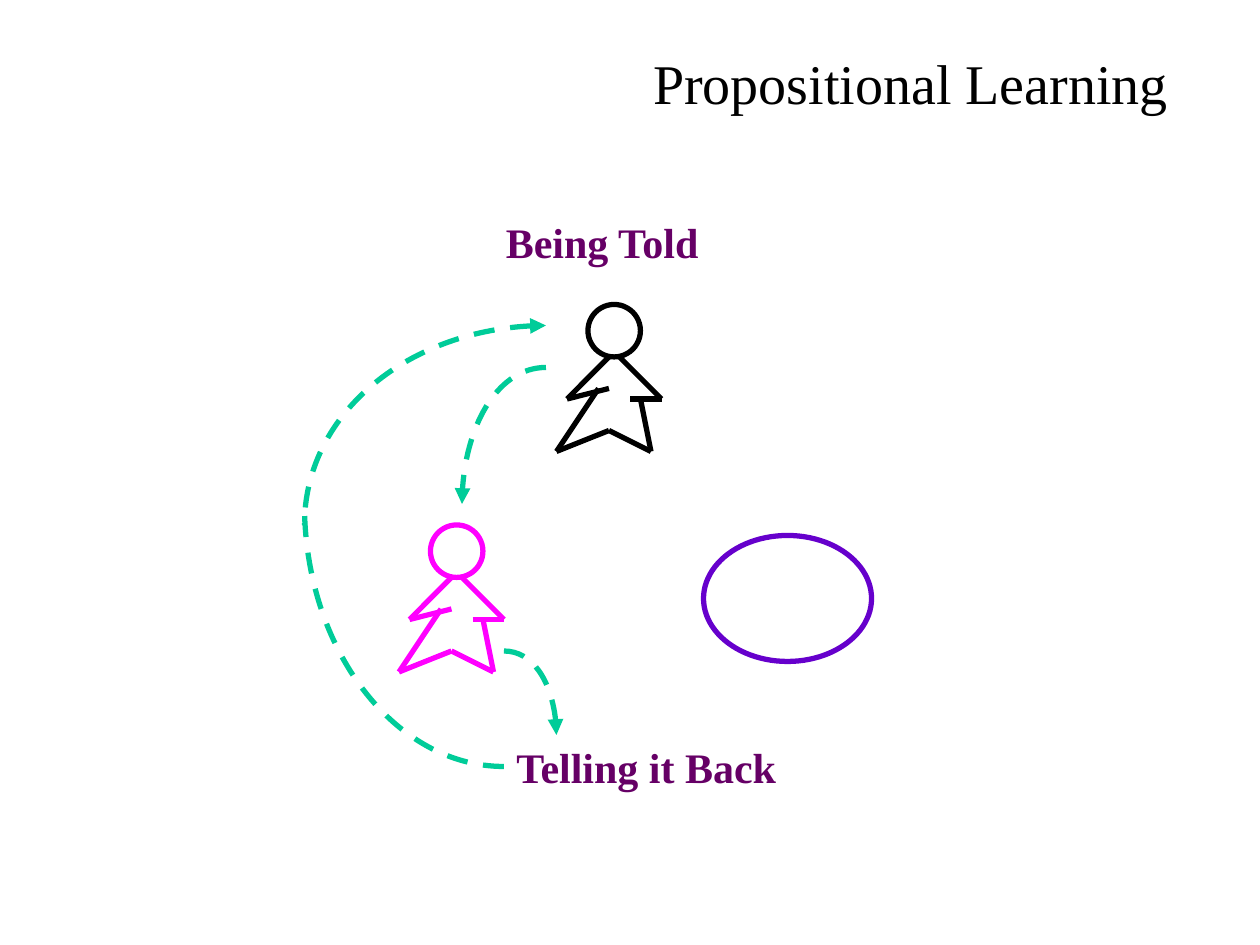
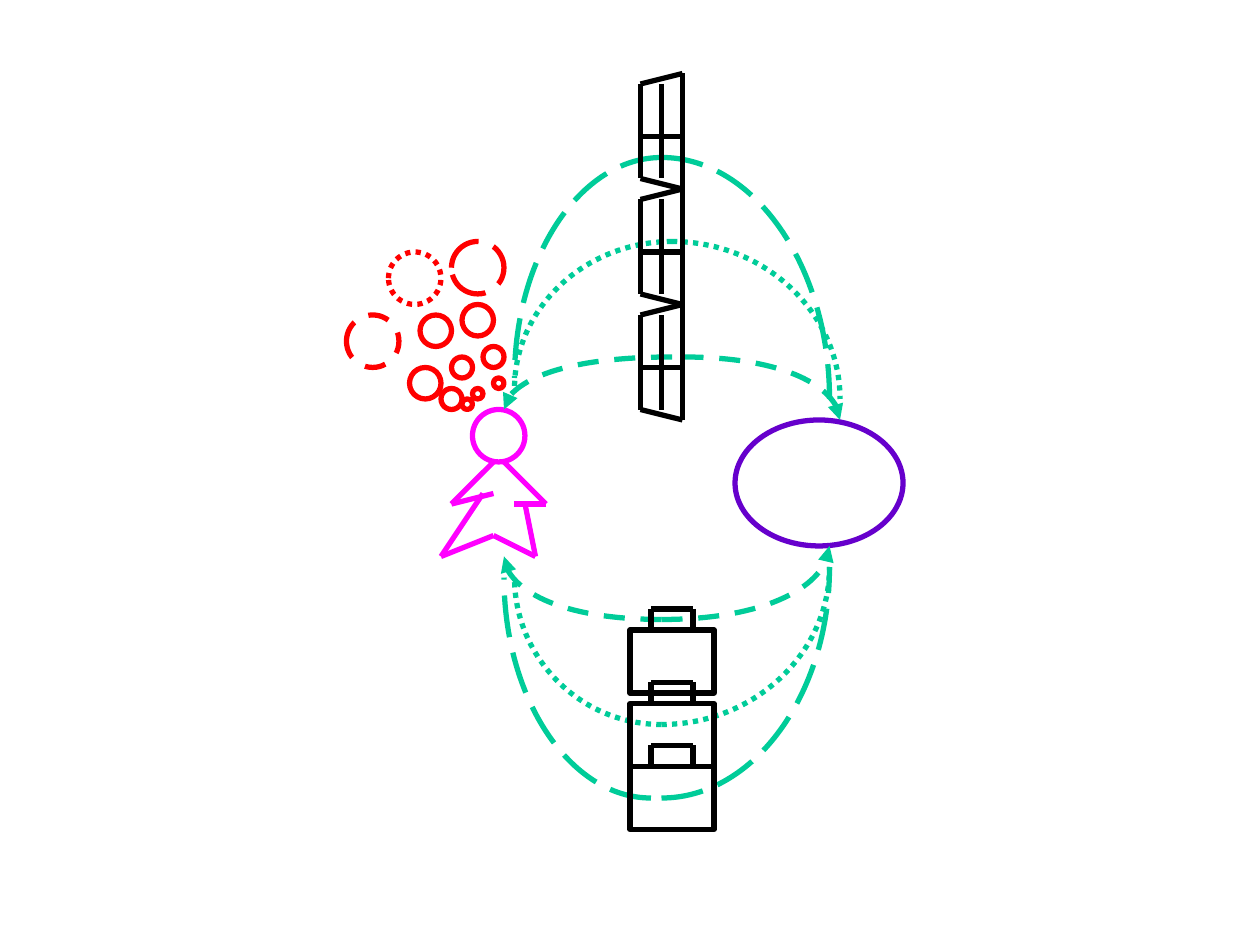
from lxml import etree
from pptx import Presentation
from pptx.dml.color import RGBColor
from pptx.enum.dml import MSO_LINE
from pptx.enum.shapes import MSO_CONNECTOR, MSO_SHAPE
from pptx.enum.text import MSO_ANCHOR, MSO_AUTO_SIZE, PP_ALIGN
from pptx.oxml.ns import qn
from pptx.util import Cm, Pt

OVAL, RECTANGLE = MSO_SHAPE.OVAL, MSO_SHAPE.RECTANGLE
STRAIGHT = MSO_CONNECTOR.STRAIGHT
DASH, DOT, LONG_DASH = MSO_LINE.DASH, MSO_LINE.ROUND_DOT, MSO_LINE.LONG_DASH
TITLE_ONLY, BLANK = 5, 6

COLORS = {
    "title": "000000",
    "label": "660066",
    "teacher": "000000",
    "learner": "FF00FF",
    "topic": "6600CC",
    "exchange": "00CC99",
    "thought": "FF0000",
    "tool": "000000",
}
FONT = "Times New Roman"
TITLE_FORMAT = {"name": FONT, "size": Pt(32), "bold": False}
LABEL_FORMAT = {"name": FONT, "size": Pt(24), "bold": True}
FRAME_FORMAT = {"word_wrap": True, "vertical_anchor": MSO_ANCHOR.TOP}
LINE_WIDTH = Pt(3)
GRID_CM = 2.54 / 12  # every drawing sits on a grid of twelfths of an inch
CURVE = 0.55  # control point ratio of a quarter ellipse

# Strokes relative to the top left of the head, window or bag
HEAD_SIZE = 5
BODY_STROKES = [
    (2, 5, -2, 9), (3, 5, 7, 9), (-2, 9, 2, 8), (4, 9, 7, 9),
    (1, 8, -3, 14), (-3, 14, 2, 12), (2, 12, 6, 14), (5, 9, 6, 14),
]
WINDOW_STROKES = [
    (0, 0, 0, 9), (0, 0, 4, -1), (0, 9, 4, 10),
    (4, -1, 4, 10), (2, 0, 2, 9), (0, 5, 4, 5),
]
HANDLE_STROKES = [(2, -2, 2, 0), (6, -2, 6, 0), (2, -2, 6, -2)]

# Each trail grows from a dot to a large bubble with its own dash
BUBBLE_SIZES = [1, 2, 3, 5]
BUBBLE_TRAILS = [
    (DASH, [(44, 38), (42, 37), (39, 35), (33, 30)]),
    (DOT, [(45, 37), (43, 34), (40, 30), (37, 24)]),
    (LONG_DASH, [(47, 36), (46, 33), (44, 29), (43, 23)]),
]

# start x, start y, end x, end y, line end that has an arrowhead
TELLING_ARCS = [
    (52, 35, 44, 48, "tailEnd"),
    (48, 73, 29, 48, None),
    (52, 31, 29, 50, "headEnd"),
    (48, 62, 53, 70, "tailEnd"),
]
EXCHANGE_ARCS = {
    DASH: [
        (63, 59, 48, 53, "tailEnd"), (63, 59, 79, 52, "tailEnd"),
        (65, 34, 80, 40, "tailEnd"), (64, 34, 48, 39, "tailEnd"),
    ],
    DOT: [
        (63, 69, 49, 55, None), (64, 23, 49, 37, None),
        (64, 23, 80, 38, None), (63, 69, 79, 54, None),
    ],
    LONG_DASH: [
        (63, 15, 49, 36, None), (62, 76, 48, 55, None),
        (63, 15, 79, 38, None), (63, 76, 79, 54, None),
    ],
}


def grid(*steps):
    return [Cm(step * GRID_CM) for step in steps]


def apply_format(target, values):
    for name, value in values.items():
        setattr(target, name, value)


def style_line(line, role, dash=None):
    line.color.rgb = RGBColor.from_string(COLORS[role])
    line.width = LINE_WIDTH
    if dash is not None:
        line.dash_style = dash


def style_outline(shape, role, dash=None):
    shape.shadow.inherit = False
    shape.fill.background()
    style_line(shape.line, role, dash)


def add_outline(slide, preset, box, role, dash=None):
    style_outline(slide.shapes.add_shape(preset, *grid(*box)), role, dash)


def add_strokes(slide, origin, strokes, role):
    left, top = origin
    for x1, y1, x2, y2 in strokes:
        ends = grid(left + x1, top + y1, left + x2, top + y2)
        stroke = slide.shapes.add_connector(STRAIGHT, *ends)
        style_line(stroke.line, role)
        etree.SubElement(stroke._element.spPr, qn("a:effectLst"))


def add_person(slide, head, role):
    add_outline(slide, OVAL, (*head, HEAD_SIZE, HEAD_SIZE), role)
    add_strokes(slide, head, BODY_STROKES, role)


def add_topic(slide, left, top):
    add_outline(slide, OVAL, (left, top, 16, 12), "topic")


def add_arc(slide, arc, dash):
    """Draw a quarter ellipse that leaves its start horizontally."""
    x1, y1, x2, y2 = grid(*arc[:4])
    builder = slide.shapes.build_freeform(x1, y1)
    builder.add_line_segments([(x2, y2)], close=False)
    shape = builder.convert_to_shape()
    bend_segment(shape)
    style_outline(shape, "exchange", dash)
    if arc[4]:
        etree.SubElement(shape.line._ln, qn("a:" + arc[4]), type="triangle")


def bend_segment(shape):
    """Turn the only straight segment into a cubic curve."""
    segment = next(shape._element.iter(qn("a:lnTo")))
    start, end = (
        (int(point.get("x")), int(point.get("y")))
        for point in segment.getparent().iter(qn("a:pt"))
    )
    controls = [
        (start[0] + CURVE * (end[0] - start[0]), start[1]),
        (end[0], end[1] - CURVE * (end[1] - start[1])),
    ]
    curve = etree.Element(qn("a:cubicBezTo"))
    for x, y in [*controls, end]:
        etree.SubElement(curve, qn("a:pt"), x=str(round(x)), y=str(round(y)))
    segment.getparent().replace(segment, curve)


def write_text(frame, text, font_format, role):
    apply_format(frame, FRAME_FORMAT)
    frame.text = text
    paragraph = frame.paragraphs[0]
    paragraph.alignment = PP_ALIGN.LEFT
    font = paragraph.runs[0].font
    apply_format(font, font_format)
    font.color.rgb = RGBColor.from_string(COLORS[role])


def add_label(slide, text, box):
    frame = slide.shapes.add_textbox(*grid(*box)).text_frame
    write_text(frame, text, LABEL_FORMAT, "label")
    frame.auto_size = MSO_AUTO_SIZE.SHAPE_TO_FIT_TEXT


def set_title(slide, text, box):
    title = slide.shapes.title
    apply_format(title, dict(zip(("left", "top", "width", "height"), grid(*box))))
    write_text(title.text_frame, text, TITLE_FORMAT, "title")
    title.text_frame.auto_size = MSO_AUTO_SIZE.NONE


def add_thoughts(slide):
    for last_dash, corners in BUBBLE_TRAILS:
        for size, corner in zip(BUBBLE_SIZES, corners):
            dash = last_dash if size == BUBBLE_SIZES[-1] else None
            add_outline(slide, OVAL, (*corner, size, size), "thought", dash)


def add_bag(slide, left, top):
    add_outline(slide, RECTANGLE, (left, top, 8, 6), "tool")
    add_strokes(slide, (left, top), HANDLE_STROKES, "tool")


def build_propositional_slide(prs):
    slide = prs.slides.add_slide(prs.slide_layouts[TITLE_ONLY])
    set_title(slide, "Propositional Learning", (61, 4, 53, 7.5))
    add_person(slide, (41, 50), "learner")
    add_topic(slide, 67, 51)
    add_label(slide, "Being Told", (47, 20, 61, 6))
    add_label(slide, "Telling it Back", (48, 70, 44, 6))
    add_person(slide, (56, 29), "teacher")
    for arc in TELLING_ARCS:
        add_arc(slide, arc, DASH)


def build_exchange_slide(prs):
    slide = prs.slides.add_slide(prs.slide_layouts[BLANK])
    add_person(slide, (45, 39), "learner")
    add_topic(slide, 70, 40)
    for dash, arcs in EXCHANGE_ARCS.items():
        for arc in arcs:
            add_arc(slide, arc, dash)
    add_thoughts(slide)
    for top in range(8, 31, 11):
        add_strokes(slide, (61, top), WINDOW_STROKES, "tool")
    for top in (60, 67, 73):
        add_bag(slide, 60, top)


def main():
    prs = Presentation()
    prs.slide_width, prs.slide_height = Cm(25.4), Cm(19.05)
    build_propositional_slide(prs)
    build_exchange_slide(prs)
    prs.save("out.pptx")


if __name__ == "__main__":
    main()
